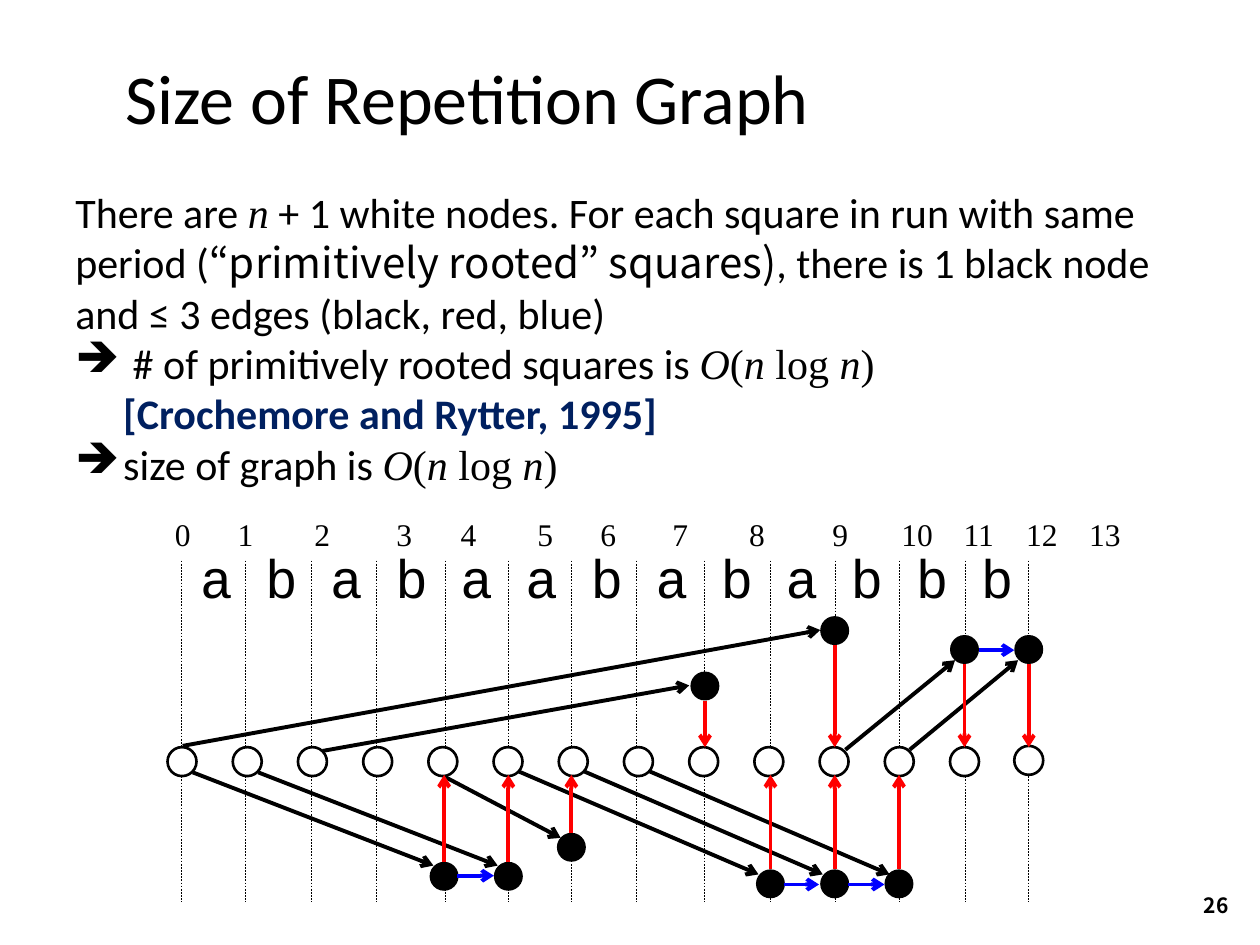
"""Build the slide on the size of a repetition graph."""
import lxml.etree
import pptx
import pptx.dml.color
import pptx.enum.dml
import pptx.enum.shapes
import pptx.enum.text
import pptx.oxml.ns
import pptx.util

Inches = pptx.util.Inches
Pt = pptx.util.Pt
qn = pptx.oxml.ns.qn
Anchor = pptx.enum.text.MSO_ANCHOR
Align = pptx.enum.text.PP_ALIGN

COLORS = {name: pptx.dml.color.RGBColor.from_string(value) for name, value in {
    "black": "000000", "white": "FFFFFF", "red": "FF0000", "blue": "0000FF", "navy": "002060",
}.items()}

STYLES = {
    "number": {"name": "Noto Sans CJK JP", "size": Pt(12), "bold": True},
    "title": {"name": "Calibri", "size": Pt(40)},
    "body": {"name": "Calibri", "size": Pt(24)},
    "quote": {"name": "Noto Sans CJK JP", "size": Pt(24)},
    "math": {"name": "Times New Roman", "size": Pt(24)},
    "variable": {"name": "Times New Roman", "size": Pt(24), "italic": True},
    "citation": {"name": "Calibri", "size": Pt(24), "bold": True},
    "index": {"name": "Times New Roman", "size": Pt(18)},
    "letters": {"name": "Courier New", "size": Pt(31)},
}

presentation = pptx.Presentation()
presentation.slide_width = Inches(10)
presentation.slide_height = Inches(7.5)
slide = presentation.slides.add_slide(presentation.slide_layouts[6])


def add_text(left, top, width, height, paragraphs, align=Align.LEFT, **frame_format):
    shape = slide.shapes.add_textbox(Inches(left), Inches(top), Inches(width), Inches(height))
    frame = shape.text_frame
    for name, value in {"word_wrap": True, **frame_format}.items():
        setattr(frame, name, value)
    for position, runs in enumerate(paragraphs):
        paragraph = frame.add_paragraph() if position else frame.paragraphs[0]
        paragraph.alignment = align
        for text, style in runs:
            if text == "\n":
                paragraph.add_line_break()
                continue
            run = paragraph.add_run()
            run.text = text
            for name, value in STYLES[style].items():
                setattr(run.font, name, value)
            run.font.color.rgb = COLORS["navy" if style == "citation" else "black"]
    return frame


def add_line(start, end, color, width, arrow=True):
    connector = slide.shapes.add_connector(
        pptx.enum.shapes.MSO_CONNECTOR.STRAIGHT, *(Inches(value) for value in (*start, *end)))
    connector.line.color.rgb = COLORS[color]
    connector.line.width = Pt(width)
    properties = connector.element.spPr
    if arrow:
        lxml.etree.SubElement(properties.find(qn("a:ln")), qn("a:tailEnd"), type="arrow")
    else:
        connector.line.dash_style = pptx.enum.dml.MSO_LINE.DASH
    lxml.etree.SubElement(properties, qn("a:effectLst"))


add_text(9.17, 6.98, 0.68, 0.4, [[("26", "number")]], Align.RIGHT, vertical_anchor=Anchor.MIDDLE)
add_text(0.9, 0.3, 8.6, 0.93, [[("Size of Repetition Graph", "title")]],
         vertical_anchor=Anchor.MIDDLE)

bound = [("O", "variable"), ("(", "math"), ("n ", "variable"), ("log ", "math"),
         ("n", "variable"), (")", "math")]
body = add_text(0.5, 1.43, 9.26, 2.84, [
    [("There are ", "body"), ("n", "variable"),
     (" + 1 white nodes. For each square in run with same period (", "body"),
     ("“primitively rooted” squares)", "quote"),
     (", there is 1 black node and ≤ 3 edges (black, red, blue)", "body")],
    [(" # of primitively rooted squares is ", "body"), *bound, ("\n", "body"),
     ("[Crochemore and Rytter, 1995]", "citation")],
    [("size of graph is ", "body"), *bound],
])
for paragraph in body.paragraphs[1:]:
    properties = paragraph._p.get_or_add_pPr()
    properties.set("marL", str(Inches(0.38)))
    properties.set("indent", str(Inches(-0.38)))
    lxml.etree.SubElement(properties, qn("a:buChar"), char="➔")

guides = [1.44, 1.95, 2.47, 2.99, 3.53, 4.03, 4.53, 5.05, 5.59, 6.11, 6.63, 7.14, 7.66, 8.16]
for x in guides:
    add_line((x, 4.45), (x, 7.16), "black", 0.25, arrow=False)

black_edges = [
    ((3.52, 6.16), (4.45, 6.65)),
    ((1.53, 6.13), (3.44, 6.87)),
    ((2.05, 6.13), (3.95, 6.87)),
    ((1.45, 5.92), (6.51, 5)),
    ((2.56, 5.96), (5.47, 5.44)),
    ((6.71, 5.95), (7.58, 5.24)),
    ((7.22, 5.95), (8.08, 5.24)),
    ((4.11, 6.12), (6.02, 6.94)),
    ((4.63, 6.12), (6.53, 6.94)),
    ((5.15, 6.12), (7.06, 6.94)),
]
for start, end in black_edges:
    add_line(start, end, "black", 2.25)

diameter = 0.23
white_nodes = [(1.33 + 0.5175 * column, 5.93) for column in range(13)] + [(8.05, 5.92)]
black_nodes = [(3.41, 6.84), (3.92, 6.84), (4.42, 6.61), (5.48, 5.33), (6.51, 4.89),
               (7.54, 5.04), (8.05, 5.04), (6, 6.9), (6.51, 6.9), (7.02, 6.9)]
for color, nodes in (("white", white_nodes), ("black", black_nodes)):
    for left, top in nodes:
        node = slide.shapes.add_shape(pptx.enum.shapes.MSO_SHAPE.OVAL, Inches(left), Inches(top),
                                      Inches(diameter), Inches(diameter))
        node.shadow.inherit = False
        node.fill.solid()
        node.fill.fore_color.rgb = COLORS[color]
        if color == "white":
            node.line.color.rgb = COLORS["black"]
            node.line.width = Pt(1.5)
        else:
            node.line.fill.background()

for left, top in black_nodes:
    x = left + diameter / 2
    above = top < 5.93
    add_line((x, top + diameter if above else top), (x, 5.93 if above else 6.15), "red", 2.25)

for left, right, y in [(3.63, 3.92, 6.95), (6.22, 6.5, 7.02), (6.73, 7.02, 7.02),
                       (7.77, 8.05, 5.16)]:
    add_line((left, y), (right, y), "blue", 2.25)

grow = pptx.enum.text.MSO_AUTO_SIZE.SHAPE_TO_FIT_TEXT
indices = add_text(1.29, 4.04, 7.9, 0.4, [[("\t".join(map(str, range(14))), "index")]],
                   auto_size=grow)
tab_list = lxml.etree.SubElement(indices.paragraphs[0]._p.get_or_add_pPr(), qn("a:tabLst"))
for stop in [0.56, 1.17, 1.82, 2.33, 2.94, 3.44, 4.01, 4.62, 5.28, 5.89, 6.38, 6.88, 7.38]:
    lxml.etree.SubElement(tab_list, qn("a:tab"), pos=str(Inches(stop)), algn="ctr")
add_text(1.49, 4.27, 6.72, 0.62, [[(" ".join("ababaabababbb"), "letters")]],
         word_wrap=False, auto_size=grow)

presentation.save("out.pptx")
